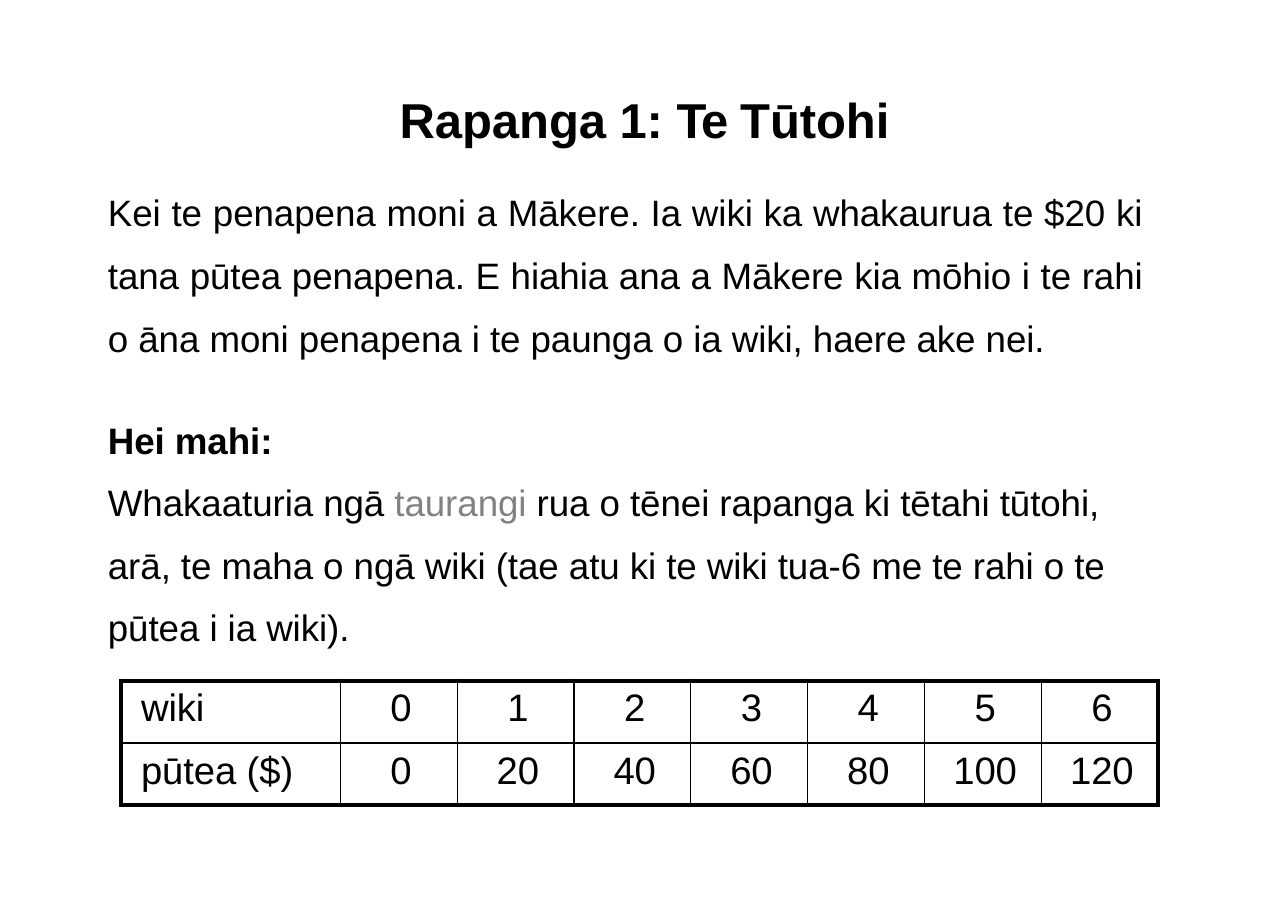
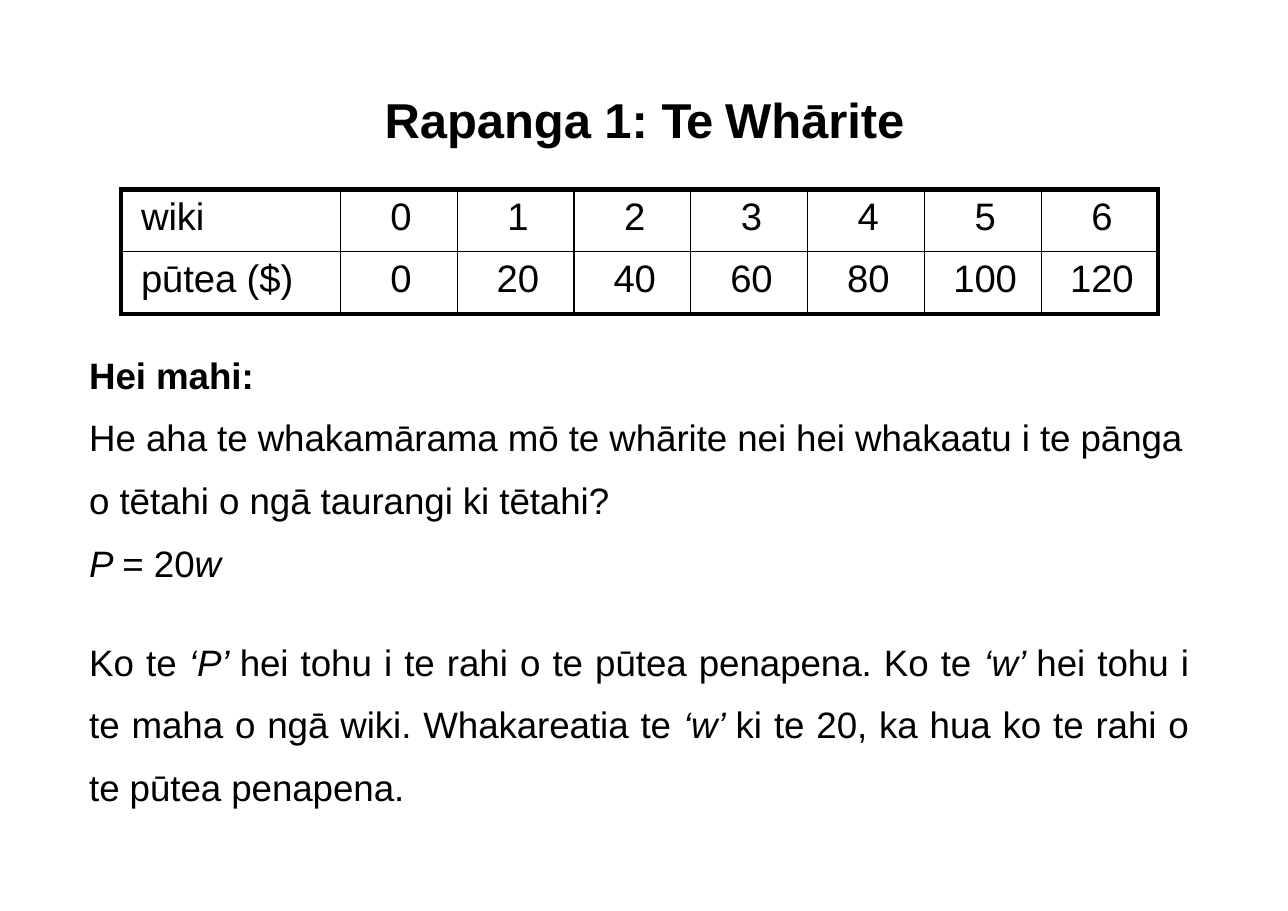
from lxml import etree
from pptx import Presentation
from pptx import util as u
from pptx.dml import color
from pptx.enum import text
from pptx.oxml import ns

BLACK, GREY = "000000", "808285"
LEFT, CENTRE, JUSTIFY = text.PP_ALIGN.LEFT, text.PP_ALIGN.CENTER, text.PP_ALIGN.JUSTIFY
WEEKS = range(7)
SAVINGS = [["wiki", *WEEKS], ["pūtea ($)", *(20 * week for week in WEEKS)]]


def paint(value):
    return color.RGBColor.from_string(value)


class Worksheet:
    """Holds the deck, its style and the current slide, on a grid of 100 columns and 100 rows."""

    font = "Arial"
    title_size, body_size, table_size = 32, 24, 25
    line_spacing = 1.42
    tracking = -0.05
    thin, thick = 1, 3

    def __init__(self):
        self.deck = Presentation()
        self.deck.slide_width, self.deck.slide_height = u.Inches(11.69), u.Inches(8.27)

    def across(self, columns):
        return round(self.deck.slide_width * columns / 100)

    def down(self, rows):
        return round(self.deck.slide_height * rows / 100)

    def add_slide(self, topic, width):
        self.page = self.deck.slides.add_slide(self.deck.slide_layouts[6])
        frame = self.add_frame(50 - width / 2, 9.67, width, 6.77)
        spans = [("Rapanga 1: ", {}), ("Te ", {"tracking": -1.2}), (topic, {})]
        self.fill_para(frame.paragraphs[0], spans, self.title_size, CENTRE, bold=True)

    def add_frame(self, left, top, width, height, inset=0.7):
        box = self.page.shapes.add_textbox(
            self.across(left), self.down(top), self.across(width), self.down(height))
        frame = box.text_frame
        frame.word_wrap = True
        frame.auto_size = text.MSO_AUTO_SIZE.SHAPE_TO_FIT_TEXT
        frame.margin_left, frame.margin_top = u.Pt(0.7), u.Pt(inset)
        frame.margin_right = frame.margin_bottom = 0
        return frame

    def fill_para(self, para, spans, size, align=LEFT, bold=False):
        para.alignment = align
        font = para.font
        font.name, font.size, font.bold = self.font, u.Pt(size), bold
        font.color.rgb = paint(BLACK)
        for words, style in spans:
            span = para.add_run()
            span.text = words
            tracking = style.get("tracking", self.tracking)
            span._r.get_or_add_rPr().set("spc", str(round(tracking * 100)))
            if style.get("italic"):
                span.font.italic = True
            if "color" in style:
                span.font.color.rgb = paint(style["color"])

    def add_body(self, left, top, width, height, paragraphs, inset=0.7):
        frame = self.add_frame(left, top, width, height, inset)
        for index, (spans, options) in enumerate(paragraphs):
            para = frame.add_paragraph() if index else frame.paragraphs[0]
            if isinstance(spans, str):
                spans = [(spans, {})]
            bold = options.get("bold", False)
            para.space_before = u.Pt(options.get("before", 0))
            para.line_spacing = 1.0 if options.get("single", bold) else self.line_spacing
            self.fill_para(para, spans, self.body_size, options.get("align", LEFT), bold)

    def add_border(self, cell, side, width):
        line = etree.SubElement(cell._tc.get_or_add_tcPr(), ns.qn(f"a:ln{side}"), w=str(u.Pt(width)))
        fill = etree.SubElement(line, ns.qn("a:solidFill"))
        etree.SubElement(fill, ns.qn("a:srgbClr"), val=BLACK)

    def add_savings_table(self, top):
        label_width, week_width, row_height = 17.02, 9.07, 6.83
        last_row, last_column = len(SAVINGS) - 1, len(SAVINGS[0]) - 1
        table = self.page.shapes.add_table(
            last_row + 1, last_column + 1, self.across(9.41), self.down(top),
            self.across(label_width + last_column * week_width),
            self.down((last_row + 1) * row_height)).table
        table.first_row = table.horz_banding = False
        for index, column in enumerate(table.columns):
            column.width = self.across(week_width if index else label_width)
        for r, values in enumerate(SAVINGS):
            table.rows[r].height = self.down(row_height)
            for c, value in enumerate(values):
                cell = table.cell(r, c)
                cell.margin_left, cell.margin_top = u.Pt(3 if c else 13), u.Pt(4.3)
                cell.margin_right = cell.margin_bottom = 0
                edges = {"L": c == 0, "R": c == last_column, "T": r == 0, "B": r == last_row}
                for side, outer in edges.items():
                    self.add_border(cell, side, self.thick if outer else self.thin)
                cell.fill.background()
                self.fill_para(cell.text_frame.paragraphs[0], [(str(value), {})],
                               self.table_size, CENTRE if c else LEFT)


def main():
    sheet = Worksheet()
    italic = {"italic": True}

    sheet.add_slide("Tūtohi", 38.58)
    sheet.add_savings_table(74.73)
    sheet.add_body(8.3, 18.74, 80.41, 52.6, [
        ("Kei te penapena moni a Mākere. Ia wiki ka whakaurua te $20 ki tana pūtea penapena. "
         "E hiahia ana a Mākere kia mōhio i te rahi o āna moni penapena i te paunga o ia wiki, "
         "haere ake nei.", {"align": JUSTIFY}),
        ("Hei mahi:", {"bold": True, "before": 38}),
        ([("Whakaaturia ngā ", {}), ("taurangi", {"color": GREY}),
          (" rua o tēnei rapanga ki tētahi tūtohi, arā, te maha o ngā wiki "
           "(tae atu ki te wiki tua-6 me te rahi o te pūtea i ia wiki).", {})], {}),
    ])

    sheet.add_slide("Whārite", 40.98)
    sheet.add_body(6.84, 36.52, 85.46, 52.6, [
        ("Hei mahi:", {"bold": True}),
        ("He aha te whakamārama mō te whārite nei hei whakaatu i te pānga "
         "o tētahi o ngā taurangi ki tētahi?", {}),
        ([("P ", italic), ("= 20", {}), ("w", italic)], {"single": True, "before": 12.2}),
        ([("Ko te ", {}), ("‘P’ ", italic),
          ("hei tohu i te rahi o te pūtea penapena. Ko te ", {}), ("‘w’ ", italic),
          ("hei tohu i te maha o ngā wiki. Whakareatia te ", {}), ("‘w’ ", italic),
          ("ki te 20, ka hua ko te rahi o te pūtea penapena.", {})],
         {"align": JUSTIFY, "before": 24}),
    ], inset=13)
    sheet.add_savings_table(20.8)

    sheet.deck.save("out.pptx")


if __name__ == "__main__":
    main()
